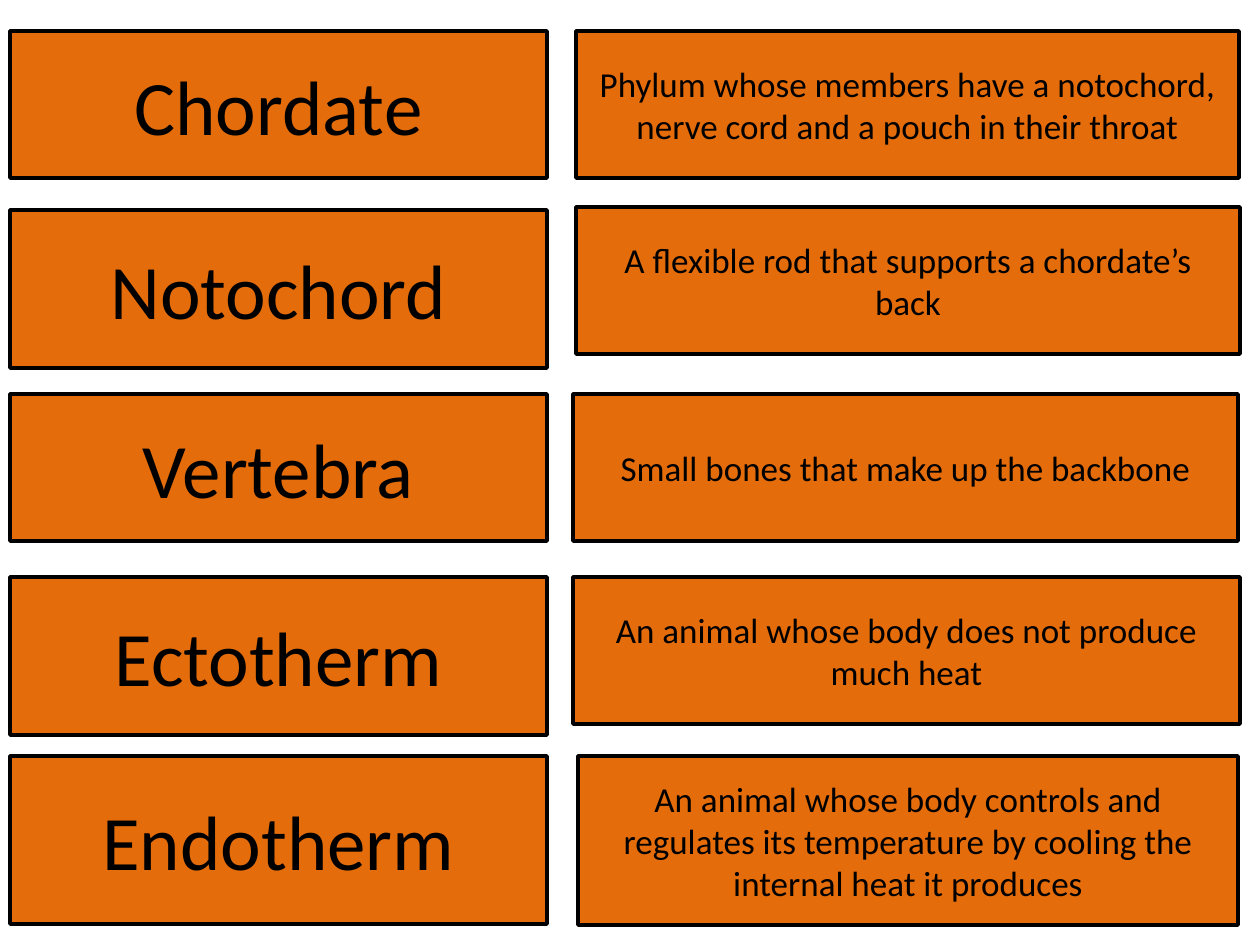
"""Build a slide of five zoology terms beside their definitions."""
from pptx import Presentation
from pptx import util as u
from pptx.dml.color import RGBColor
from pptx.enum import shapes, text

ORANGE = RGBColor(0xE4, 0x6C, 0x0A)
BLACK = RGBColor(0, 0, 0)
TERM_LEFT, TERM_WIDTH = 10, 537


def px(n):
    return u.Emu(round(n * 914400 / 126))


def add_card(s, box, words, size):
    sp = s.shapes.add_shape(shapes.MSO_SHAPE.FLOWCHART_PROCESS, *map(px, box))
    sp.shadow.inherit = False
    sp.fill.solid()
    sp.fill.fore_color.rgb = ORANGE
    sp.line.color.rgb = BLACK
    sp.line.width = u.Pt(2)
    tf = sp.text_frame
    tf.word_wrap = True
    tf.vertical_anchor = text.MSO_ANCHOR.MIDDLE
    p = tf.paragraphs[0]
    p.alignment = text.PP_ALIGN.CENTER
    r = p.add_run()
    r.text = words
    for name, value in {"name": "Calibri", "size": u.Pt(size)}.items():
        setattr(r.font, name, value)
    r.font.color.rgb = BLACK


prs = Presentation()
prs.slide_width, prs.slide_height = px(1260), px(945)
s = prs.slides.add_slide(prs.slide_layouts[6])

cards = [
    ("Chordate", 31, 147, (576, 31, 663, 147),
     "Phylum whose members have a notochord, nerve cord and a pouch in their throat"),
    ("Notochord", 210, 158, (576, 207, 664, 147),
     "A flexible rod that supports a chordate’s back"),
    ("Vertebra", 394, 147, (573, 394, 665, 147),
     "Small bones that make up the backbone"),
    ("Ectotherm", 577, 158, (573, 577, 667, 147),
     "An animal whose body does not produce much heat"),
    ("Endotherm", 756, 168, (578, 756, 660, 169),
     "An animal whose body controls and regulates its temperature "
     "by cooling the internal heat it produces"),
]
for term, top, height, definition_box, definition in cards:
    add_card(s, (TERM_LEFT, top, TERM_WIDTH, height), term, 44)
    add_card(s, definition_box, definition, 20)

prs.save("out.pptx")
